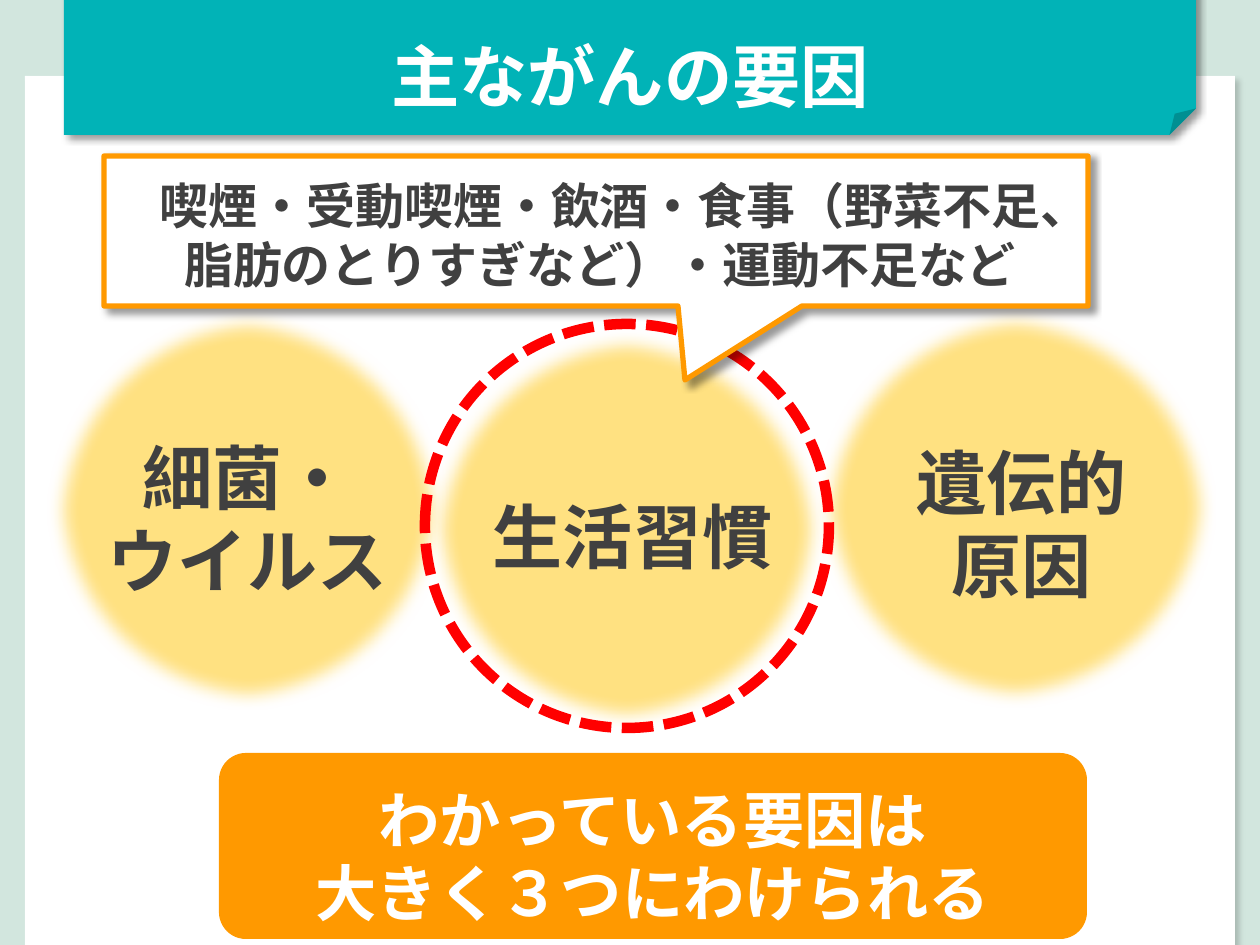
from lxml import etree
from pptx import Presentation
from pptx import util as u
from pptx.dml.color import RGBColor
from pptx.enum import dml, shapes, text
from pptx.oxml.ns import qn

PX = 7257.14
MINT = RGBColor(0xD2, 0xE6, 0xDE)
TEAL = RGBColor(0x01, 0xB3, 0xB7)
YELLOW = RGBColor(0xFF, 0xE1, 0x81)
ORANGE = RGBColor(0xFF, 0x99, 0x00)
RED = RGBColor(0xFF, 0x00, 0x00)
WHITE = RGBColor(0xFF, 0xFF, 0xFF)
DARK = RGBColor(0x40, 0x40, 0x40)
PRESET = shapes.MSO_SHAPE
HEADING = "Quicksand"
GOTHIC = "Noto Sans CJK JP"
CIRCLE = 402


def px(value):
    return u.Emu(round(value * PX))


def set_attributes(target, values):
    for key, value in values.items():
        setattr(target, key, value)


def style(shape, fill=None, line=None, width=0):
    shape.shadow.inherit = False
    if fill is None:
        shape.fill.background()
    else:
        shape.fill.solid()
        shape.fill.fore_color.rgb = fill
    if line is None:
        shape.line.fill.background()
    else:
        shape.line.color.rgb = line
        shape.line.width = u.Pt(width)


def add_effect(shape, tag, **attributes):
    effects = shape.element.spPr.find(qn("a:effectLst"))
    return etree.SubElement(effects, qn(tag), {k: str(v) for k, v in attributes.items()})


def add_shadow(shape, blur, distance, alpha):
    shadow = add_effect(shape, "a:outerShdw", blurRad=u.Pt(blur), dist=u.Pt(distance),
                        dir=45 * 60000, algn="tl", rotWithShape=0)
    color = etree.SubElement(shadow, qn("a:srgbClr"), val="000000")
    etree.SubElement(color, qn("a:alpha"), val=str(alpha * 1000))


def add_block(slide, preset, box, **look):
    block = slide.shapes.add_shape(preset, *map(px, box))
    style(block, **look)
    return block


def write(shape, lines, size, color, font=HEADING, anchor=text.MSO_ANCHOR.TOP,
          insets=(13, 6, 13, 6), spacing=None):
    frame = shape.text_frame
    frame.text = "\n".join(lines)
    sides = ("margin_left", "margin_top", "margin_right", "margin_bottom")
    set_attributes(frame, {"word_wrap": True, "auto_size": text.MSO_AUTO_SIZE.NONE,
                           "vertical_anchor": anchor, **dict(zip(sides, map(px, insets)))})
    for paragraph in frame.paragraphs:
        set_attributes(paragraph, {"alignment": text.PP_ALIGN.CENTER,
                                   "line_spacing": spacing})
        for run in paragraph.runs:
            set_attributes(run.font, {"size": u.Pt(size), "bold": True, "name": font})
            run.font.color.rgb = color
            latin = run.font._element.find(qn("a:latin"))
            latin.addnext(latin.makeelement(qn("a:ea"), {"typeface": font}))


def add_title(slide, banner, wording):
    title = slide.shapes.title
    places = dict(zip(("left", "top", "width", "height"), map(px, (45, 28, 1170, 97))))
    set_attributes(title, places)
    banner.element.addnext(title.element)
    write(title, [wording], 39, WHITE)


def add_factor(slide, left, top, lines, label_box):
    circle = add_block(slide, PRESET.OVAL, (left, top, CIRCLE, CIRCLE), fill=YELLOW)
    add_effect(circle, "a:softEdge", rad=127000)
    label = slide.shapes.add_textbox(*map(px, label_box))
    write(label, lines, 40, DARK)


def add_callout(slide, outline, wording):
    builder = slide.shapes.build_freeform(*outline[0], scale=PX)
    builder.add_line_segments(outline[1:], close=True)
    callout = builder.convert_to_shape()
    style(callout, fill=WHITE, line=ORANGE, width=3)
    add_shadow(callout, 4, 3, 40)
    write(callout, [wording], 28, DARK, insets=(34, 20, 26, 6))


def main():
    deck = Presentation()
    set_attributes(deck, {"slide_width": u.Inches(10), "slide_height": u.Inches(7.5)})
    slide = deck.slides.add_slide(deck.slide_layouts[5])
    slide.background.fill.solid()
    slide.background.fill.fore_color.rgb = MINT

    page = add_block(slide, PRESET.RECTANGLE, (25, 76, 1210, 891), fill=WHITE)
    add_shadow(page, 3, 4, 18)
    banner = add_block(slide, PRESET.FOLDED_CORNER, (64, -24, 1132, 159), fill=TEAL)
    add_shadow(banner, 4, 3, 40)
    add_title(slide, banner, "主ながんの要因")

    factors = [
        (426, 329, ["生活習慣"], (473, 488, 319, 97)),
        (47, 309, ["細菌・", "ウイルス"], (60, 428, 375, 183)),
        (815, 307, ["遺伝的", "原因"], (862, 433, 319, 183)),
    ]
    for factor in factors:
        add_factor(slide, *factor)

    ring = add_block(slide, PRESET.OVAL, (425, 324, 404, 404), line=RED, width=6)
    ring.line.dash_style = dml.MSO_LINE.SQUARE_DOT

    add_callout(slide, [(104, 156), (1088, 156), (1088, 306), (802, 306),
                        (685, 380), (678, 306), (104, 306)],
                "喫煙・受動喫煙・飲酒・食事（野菜不足、脂肪のとりすぎなど）・運動不足など")

    summary = add_block(slide, PRESET.ROUNDED_RECTANGLE, (219, 753, 868, 186), fill=ORANGE)
    summary.adjustments[0] = 0.145
    write(summary, ["わかっている要因は", "大きく３つにわけられる"], 35, WHITE, GOTHIC,
          text.MSO_ANCHOR.MIDDLE, (13, 25, 13, 6), u.Pt(42))

    deck.save("out.pptx")


if __name__ == "__main__":
    main()
